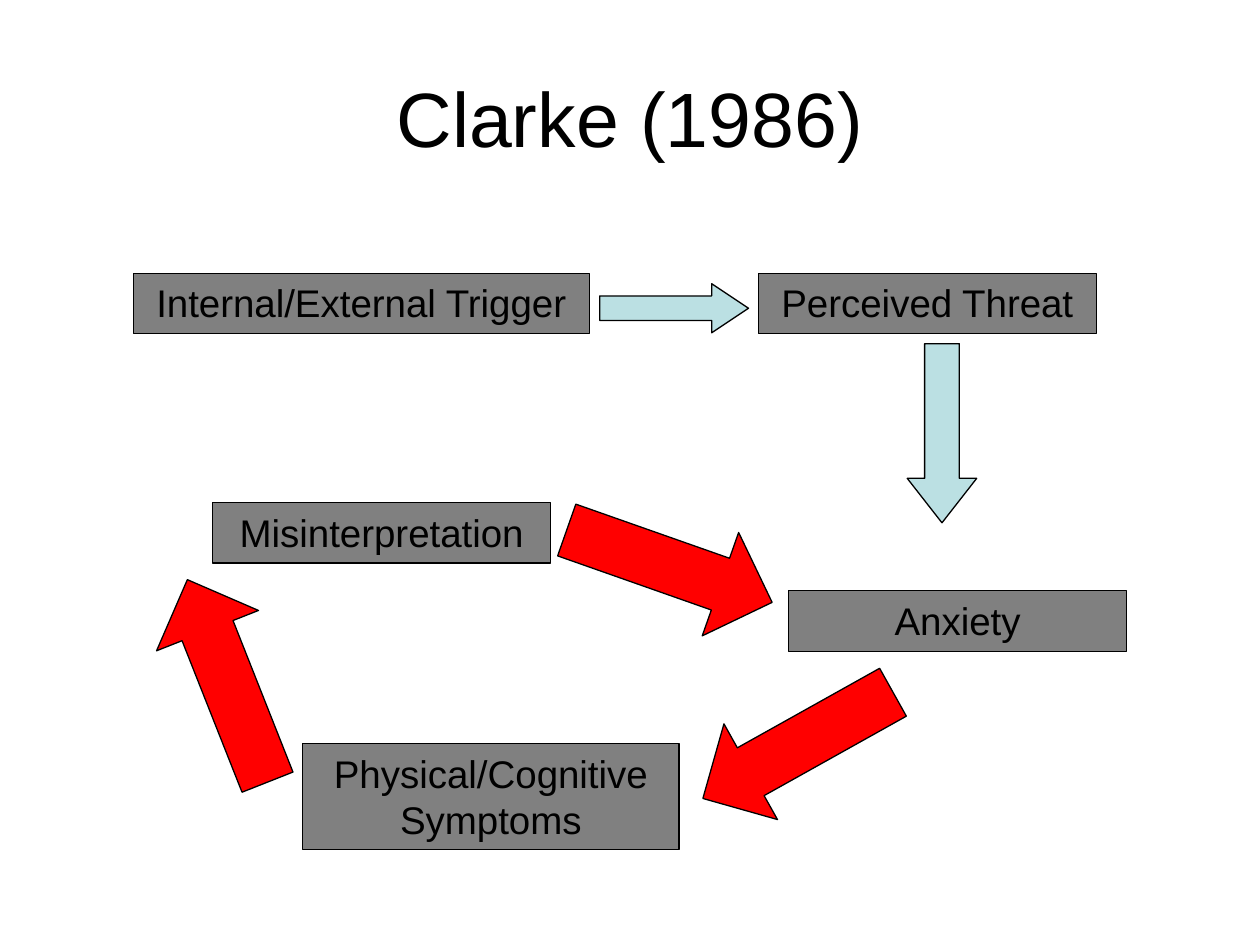
import pptx
import pptx.dml.color
import pptx.enum.shapes
import pptx.enum.text
import pptx.util

Cm = pptx.util.Cm
SHAPE = pptx.enum.shapes.MSO_SHAPE
COLORS = {"text": "000000", "line": "000000", "box": "808080",
          "trigger": "BBE0E3", "cycle": "FF0000"}


def rgb(name):
    """Return the named colour."""
    return pptx.dml.color.RGBColor.from_string(COLORS[name])


def write(tf, text, size):
    """Put centred text in a text frame."""
    tf.text = text
    tf.word_wrap = True
    p = tf.paragraphs[0]
    p.alignment = pptx.enum.text.PP_ALIGN.CENTER
    font = p.runs[0].font
    font.name, font.size = "Arial", pptx.util.Pt(size)
    font.color.rgb = rgb("text")


def add_shape(s, kind, x, y, w, h, fill):
    """Add an outlined, filled shape without shadow."""
    sp = s.shapes.add_shape(kind, Cm(x), Cm(y), Cm(w), Cm(h))
    sp.shadow.inherit = False
    sp.fill.solid()
    sp.fill.fore_color.rgb = rgb(fill)
    sp.line.color.rgb = rgb("line")
    sp.line.width = pptx.util.Pt(0.75)
    return sp


def add_box(s, text, x, y, w=6.81, h=1.22):
    """Add a labelled grey box."""
    sp = add_shape(s, SHAPE.RECTANGLE, x, y, w, h, "box")
    tf = sp.text_frame
    write(tf, text, 22)
    tf.vertical_anchor = pptx.enum.text.MSO_ANCHOR.TOP
    tf.auto_size = pptx.enum.text.MSO_AUTO_SIZE.SHAPE_TO_FIT_TEXT


def add_title(s, x, y, w, h):
    """Add the slide title."""
    tf = s.shapes.add_textbox(Cm(x), Cm(y), Cm(w), Cm(h)).text_frame
    write(tf, "Clarke (1986)", 44)
    tf.vertical_anchor = pptx.enum.text.MSO_ANCHOR.MIDDLE


def add_trigger_flow(s, x, y):
    """Add the path from trigger through threat towards anxiety."""
    add_box(s, "Internal/External Trigger", x, y, w=9.19)
    add_box(s, "Perceived Threat", x + 12.6, y)
    for kind, dx, dy, w, h, head in (
            (SHAPE.RIGHT_ARROW, 9.4, 0.21, 3, 0.99, 0.75),
            (SHAPE.DOWN_ARROW, 15.6, 1.42, 1.4, 3.61, 0.64)):
        sp = add_shape(s, kind, x + dx, y + dy, w, h, "trigger")
        sp.adjustments[1] = head


def add_anxiety_cycle(s, x, y):
    """Add the loop of anxiety, symptoms and misinterpretation."""
    add_box(s, "Anxiety", x + 13.51, y + 1.78)
    add_box(s, "Misinterpretation", x + 1.9, y)
    add_box(s, "Physical/Cognitive Symptoms", x + 3.71, y + 4.86, 7.59, 2.13)
    for dx, dy, angle in ((8.91, 0.18, 19.4), (11.5, 3.79, 150.8), (0, 2.49, 248.4)):
        sp = add_shape(s, SHAPE.RIGHT_ARROW, x + dx, y + dy, 4.39, 2.21, "cycle")
        sp.rotation = angle


def main():
    """Build and save the slide."""
    prs = pptx.Presentation()
    prs.slide_width, prs.slide_height = Cm(25.4), Cm(19.05)
    s = prs.slides.add_slide(prs.slide_layouts[6])
    add_title(s, 1.27, 0.76, 22.86, 3.18)
    add_trigger_flow(s, 2.69, 5.51)
    add_anxiety_cycle(s, 2.39, 10.13)
    prs.save("out.pptx")


if __name__ == "__main__":
    main()
